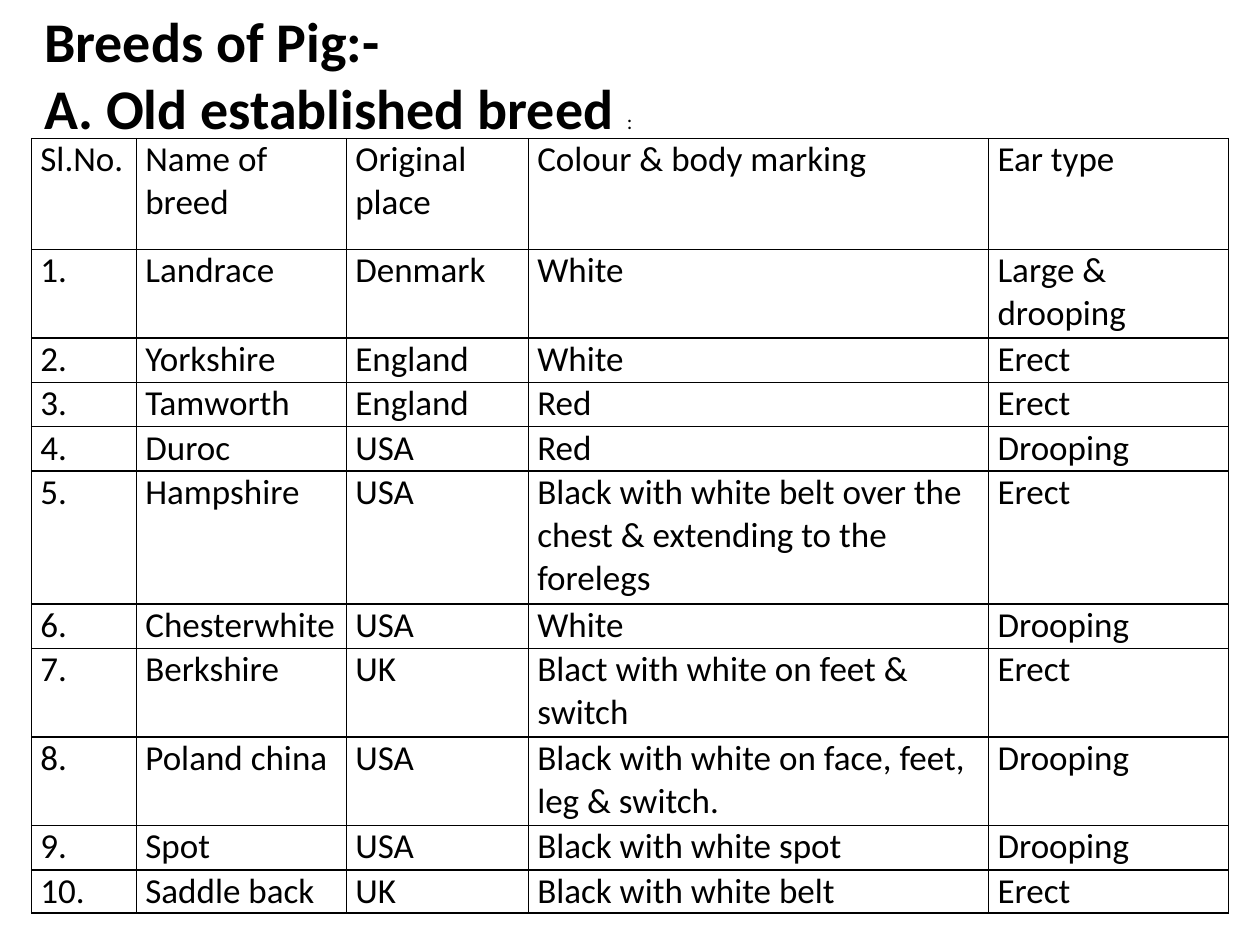
from pptx import Presentation
from pptx.dml.color import RGBColor
from pptx.enum.text import MSO_ANCHOR, MSO_AUTO_SIZE, PP_ALIGN
from pptx.oxml import parse_xml
from pptx.oxml.ns import nsdecls
from pptx.util import Pt

# Content
TITLE = [
    [("Breeds of Pig:-", 32, True)],
    [("A. Old established breed ", 32, True), (":", 12, False)],
]
HEADER = ("Sl.No.", "Name of breed", "Original place",
          "Colour & body marking", "Ear type")
# Name, place, colour and marking, ear type, lines of text in the row
BREEDS = [
    ("Landrace", "Denmark", "White", "Large & drooping", 2),
    ("Yorkshire", "England", "White", "Erect", 1),
    ("Tamworth", "England", "Red", "Erect", 1),
    ("Duroc", "USA", "Red", "Drooping", 1),
    ("Hampshire", "USA",
     "Black with white belt over the chest & extending to the forelegs", "Erect", 3),
    ("Chesterwhite", "USA", "White", "Drooping", 1),
    ("Berkshire", "UK", "Blact with white on feet & switch", "Erect", 2),
    ("Poland china", "USA", "Black with white on face, feet, leg & switch.",
     "Drooping", 2),
    ("Spot", "USA", "Black with white spot", "Drooping", 1),
    ("Saddle back", "UK", "Black with white belt", "Erect", 1),
]

# Layout in points
LEFT, WIDTH = 18, 684
TABLE_TOP = 79.2
COL_WIDTHS = (60, 120, 104, 263, 137)
LINE_HEIGHT = 25.34
HEADER_HEIGHT = 2.5 * LINE_HEIGHT
LAST_HEIGHT = 24.4
BLACK = "000000"


def rgb(hex_color):
    return RGBColor.from_string(hex_color)


def add_text(p, text, size=20, bold=False, color=BLACK, font="Calibri"):
    p.alignment = PP_ALIGN.LEFT
    r = p.add_run()
    r.text = text
    r.font.size, r.font.bold, r.font.name = Pt(size), bold, font
    r.font.color.rgb = rgb(color)


def add_borders(cell, color=BLACK, width=1):
    tcPr = cell._tc.get_or_add_tcPr()
    for i, side in enumerate(("lnL", "lnR", "lnT", "lnB")):
        tcPr.insert(i, parse_xml(
            f'<a:{side} {nsdecls("a")} w="{Pt(width)}"><a:solidFill>'
            f'<a:srgbClr val="{color}"/></a:solidFill></a:{side}>'))


prs = Presentation()
prs.slide_width, prs.slide_height = Pt(720), Pt(540)
s = prs.slides.add_slide(prs.slide_layouts[5])

# Title
title = s.shapes.title
title.left, title.top, title.width, title.height = Pt(LEFT), Pt(0), Pt(WIDTH), Pt(106.5)
tf = title.text_frame
tf.word_wrap = True
tf.auto_size = MSO_AUTO_SIZE.NONE
tf.vertical_anchor = MSO_ANCHOR.TOP
for i, runs in enumerate(TITLE):
    p = tf.add_paragraph() if i else tf.paragraphs[0]
    for text, size, bold in runs:
        add_text(p, text, size=size, bold=bold)

# Table
rows = [HEADER] + [(f"{n}.", *breed[:-1]) for n, breed in enumerate(BREEDS, 1)]
heights = [HEADER_HEIGHT] + [breed[-1] * LINE_HEIGHT for breed in BREEDS]
heights[-1] = LAST_HEIGHT
table = s.shapes.add_table(len(rows), len(HEADER), Pt(LEFT), Pt(TABLE_TOP),
                           Pt(WIDTH), Pt(sum(heights))).table
table.first_row = table.horz_banding = False
for col, width in zip(table.columns, COL_WIDTHS):
    col.width = Pt(width)
for row, height, texts in zip(table.rows, heights, rows):
    row.height = Pt(height)
    for cell, text in zip(row.cells, texts):
        cell.margin_left = cell.margin_right = Pt(5.1)
        cell.margin_top = cell.margin_bottom = 0
        cell.fill.background()
        add_borders(cell)
        add_text(cell.text_frame.paragraphs[0], text)

prs.save("out.pptx")
